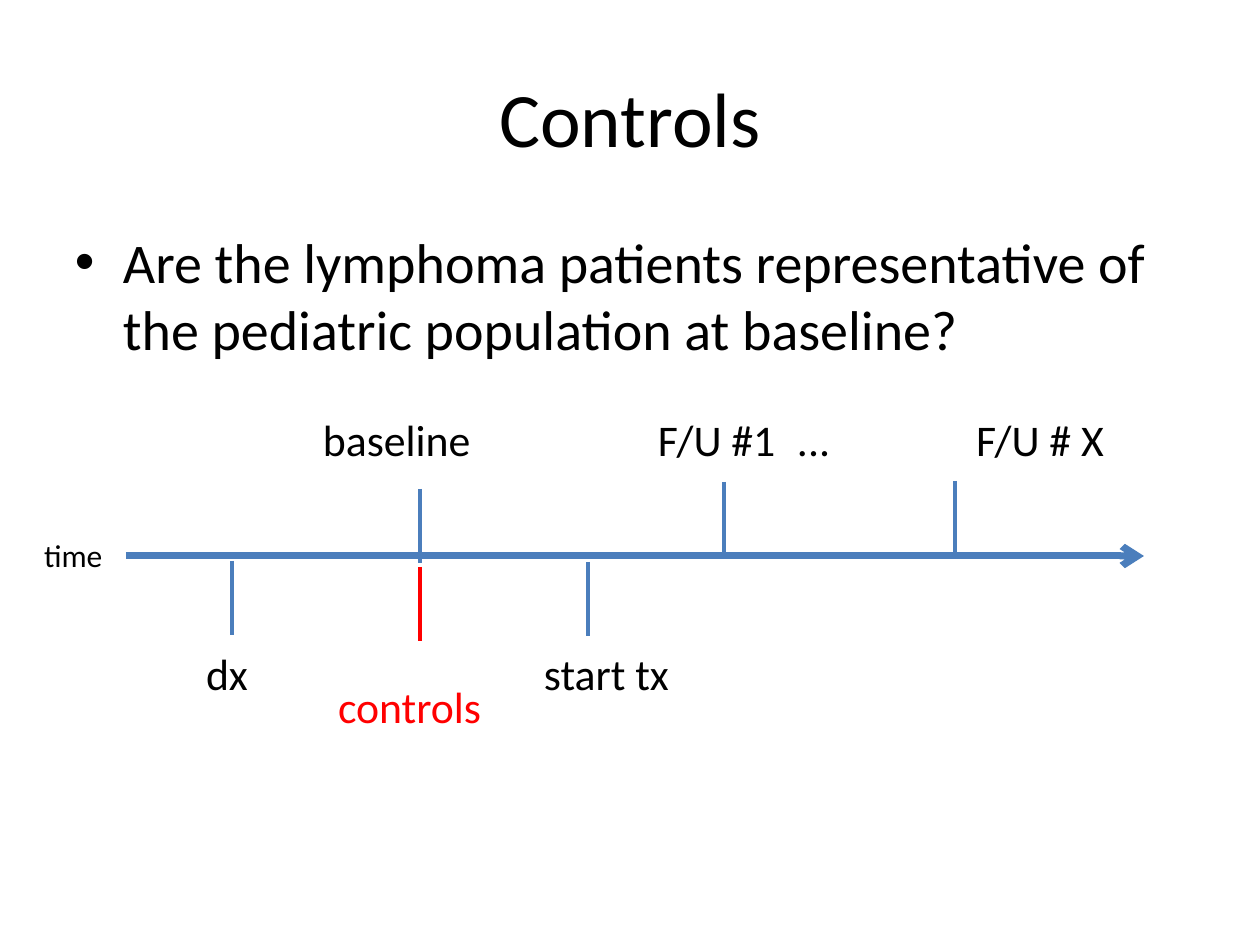
import pptx
import pptx.dml.color
import pptx.enum.shapes
import pptx.enum.text
import pptx.oxml.ns
import pptx.util
from lxml import etree

PX = 914400 // 126
COLORS = {"text": "000000", "axis": "4B7EBC", "controls": "FF0000"}
ALIGN = pptx.enum.text.PP_ALIGN
ANCHOR = pptx.enum.text.MSO_ANCHOR


def rgb(name):
    return pptx.dml.color.RGBColor.from_string(COLORS[name])


def add_child(parent, tag, **attrs):
    return etree.SubElement(parent, pptx.oxml.ns.qn(tag), attrs)


def add_text(s, text, box, size=25, color="text", align=ALIGN.LEFT,
             anchor=ANCHOR.TOP, wrap=False, bullet_indent=0):
    sp = s.shapes.add_textbox(*(v * PX for v in box))
    tf = sp.text_frame
    tf.word_wrap = wrap
    tf.vertical_anchor = anchor
    tf.margin_left = tf.margin_right = tf.margin_top = tf.margin_bottom = 0
    p = tf.paragraphs[0]
    p.alignment = align
    r = p.add_run()
    r.text = text
    r.font.name = "Calibri"
    r.font.size = pptx.util.Pt(size)
    r.font.color.rgb = rgb(color)
    if bullet_indent:
        pPr = p._p.get_or_add_pPr()
        pPr.set("marL", str(bullet_indent * PX))
        pPr.set("indent", str(-bullet_indent * PX))
        add_child(pPr, "a:buFont", typeface="Arial")
        add_child(pPr, "a:buChar", char="•")


def add_line(s, x1, y1, x2, y2, width=2, color="axis", arrow=False):
    line = s.shapes.add_connector(pptx.enum.shapes.MSO_CONNECTOR.STRAIGHT,
                                  x1 * PX, y1 * PX, x2 * PX, y2 * PX)
    line.line.width = pptx.util.Pt(width)
    line.line.color.rgb = rgb(color)
    if arrow:
        add_child(line.line._get_or_add_ln(), "a:tailEnd", type="arrow")
    add_child(line._element.spPr, "a:effectLst")


def add_title(s, x, y, w, h):
    add_text(s, "Controls", (x, y, w, h), size=44, align=ALIGN.CENTER,
             anchor=ANCHOR.MIDDLE, wrap=True)


def add_body(s, x, y, w, h):
    add_text(s, "Are the lymphoma patients representative of the pediatric "
             "population at baseline?", (x, y, w, h), size=32, wrap=True,
             bullet_indent=48)


def add_timeline(s, x, y, w, h):
    axis_y = y + 149
    tick = 74
    add_line(s, x + 82, axis_y, x + w, axis_y, width=4, arrow=True)
    add_text(s, "time", (x, y + 129, 70, 38), size=18)

    ticks = [(188, 154, "axis"), (376, 82, "axis"), (544, 155, "axis"),
             (680, 75, "axis"), (911, 74, "axis"), (376, 160, "controls")]
    for dx, dy, color in ticks:
        add_line(s, x + dx, y + dy, x + dx, y + dy + tick, color=color)

    labels = [("baseline", 279, 6, "text"), ("F/U #1", 614, 6, "text"),
              ("...", 753, 6, "text"), ("F/U # X", 932, 6, "text"),
              ("dx", 162, 240, "text"), ("start tx", 500, 240, "text"),
              ("controls", 294, 273, "controls")]
    for text, dx, dy, color in labels:
        add_text(s, text, (x + dx, y + dy, 160, 53), color=color)


def main():
    prs = pptx.Presentation()
    prs.slide_width = 1260 * PX
    prs.slide_height = 945 * PX
    s = prs.slides.add_slide(prs.slide_layouts[6])
    add_title(s, 63, 38, 1134, 158)
    add_body(s, 75, 227, 1110, 612)
    add_timeline(s, 44, 407, 1100, 326)
    prs.save("out.pptx")


if __name__ == "__main__":
    main()
